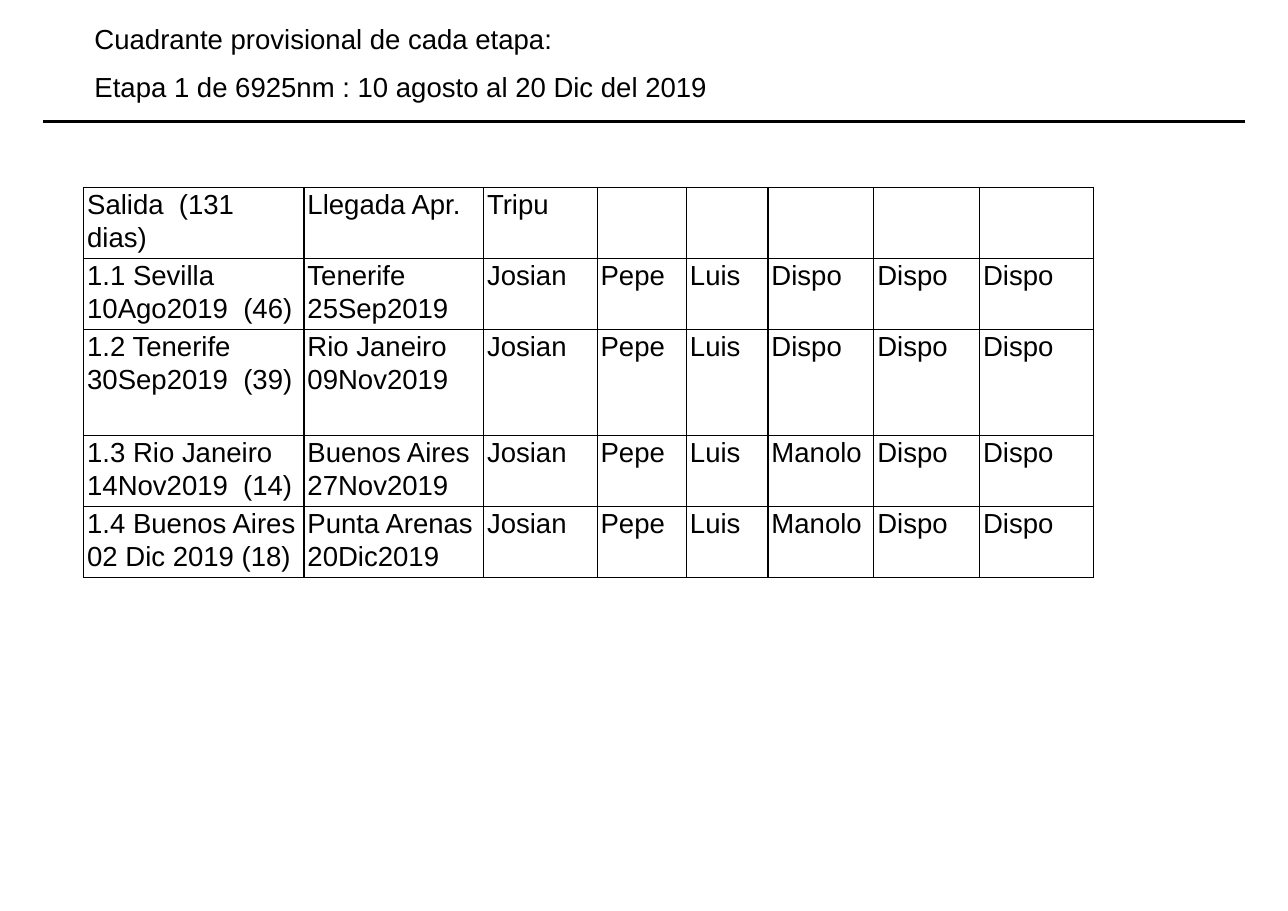
from dataclasses import dataclass

from lxml.etree import SubElement
from pptx import Presentation
from pptx.dml.color import RGBColor
from pptx.enum.shapes import MSO_CONNECTOR
from pptx.oxml.ns import qn
from pptx.util import Cm, Pt


@dataclass(frozen=True)
class Theme:
    font: str = "Arial"
    ink: str = "000000"
    body_size: float = 18
    rule_width: float = 1.5
    border_width: float = 1
    line_spacing: float = 1.07
    space_after: float = 8


class SlideBuilder:
    def __init__(self, slide, theme):
        self.slide = slide
        self.theme = theme

    def style(self, p):
        p.font.name = self.theme.font
        p.font.size = Pt(self.theme.body_size)
        p.font.color.rgb = RGBColor.from_string(self.theme.ink)
        p.line_spacing = self.theme.line_spacing

    def rule(self, x1, x2, y):
        line = self.slide.shapes.add_connector(
            MSO_CONNECTOR.STRAIGHT, Cm(x1), Cm(y), Cm(x2), Cm(y))
        line.line.color.rgb = RGBColor.from_string(self.theme.ink)
        line.line.width = Pt(self.theme.rule_width)
        SubElement(line._element.spPr, qn("a:effectLst"))

    def heading(self, x, y, w, h, text):
        tf = self.slide.shapes.add_textbox(Cm(x), Cm(y), Cm(w), Cm(h)).text_frame
        tf.word_wrap = True
        tf.text = text
        for p in tf.paragraphs:
            self.style(p)
            p.space_after = Pt(self.theme.space_after)

    def border(self, cell):
        tc_pr = cell._tc.get_or_add_tcPr()
        for side in ("lnL", "lnR", "lnT", "lnB"):
            ln = SubElement(tc_pr, qn(f"a:{side}"), w=str(Pt(self.theme.border_width)))
            fill = SubElement(ln, qn("a:solidFill"))
            SubElement(fill, qn("a:srgbClr"), val=self.theme.ink)

    def table(self, x, y, widths, heights, rows):
        table = self.slide.shapes.add_table(
            len(heights), len(widths), Cm(x), Cm(y), Cm(sum(widths)), Cm(sum(heights))
        ).table
        table.first_row = table.horz_banding = False
        for column, width in zip(table.columns, widths):
            column.width = Cm(width)
        for row, height, texts in zip(table.rows, heights, rows):
            row.height = Cm(height)
            for cell, text in zip(row.cells, texts):
                self.cell(cell, text)

    def cell(self, cell, text):
        cell.margin_left = cell.margin_right = Cm(0.08)
        cell.margin_top = cell.margin_bottom = 0
        self.border(cell)
        cell.fill.background()
        cell.text = text
        for p in cell.text_frame.paragraphs:
            self.style(p)


# Legs of the stage: departure, arrival and the crew member who varies
HEADER = ["Salida  (131 dias)", "Llegada Apr.", "Tripu"] + [""] * 5
LEGS = [
    ("1.1 Sevilla 10Ago2019  (46)", "Tenerife\n25Sep2019", "Dispo"),
    ("1.2 Tenerife\n30Sep2019  (39)", "Rio Janeiro\n09Nov2019", "Dispo"),
    ("1.3 Rio Janeiro\n14Nov2019  (14)", "Buenos Aires\n27Nov2019", "Manolo"),
    ("1.4 Buenos Aires\n02 Dic 2019 (18)", "Punta Arenas 20Dic2019", "Manolo"),
]
COLUMN_WIDTHS = [5.08, 4.14, 2.62, 2.06, 1.88, 2.44, 2.44, 2.62]
ROW_HEIGHTS = [1.64, 1.64, 2.44, 1.64, 1.64]


def main():
    prs = Presentation()
    prs.slide_width, prs.slide_height = Cm(29.7), Cm(21)
    s = SlideBuilder(prs.slides.add_slide(prs.slide_layouts[6]), Theme())

    # Heading and its rule
    s.rule(1, 28.7, 2.8)
    s.heading(1.93, 0.33, 19.25, 2.18,
              "Cuadrante provisional de cada etapa:\n"
              "Etapa 1 de 6925nm : 10 agosto al 20 Dic del 2019")

    # Crew schedule
    rows = [HEADER] + [
        [start, end, "Josian", "Pepe", "Luis", fourth, "Dispo", "Dispo"]
        for start, end, fourth in LEGS
    ]
    s.table(1.93, 4.32, COLUMN_WIDTHS, ROW_HEIGHTS, rows)

    prs.save("out.pptx")


if __name__ == "__main__":
    main()
